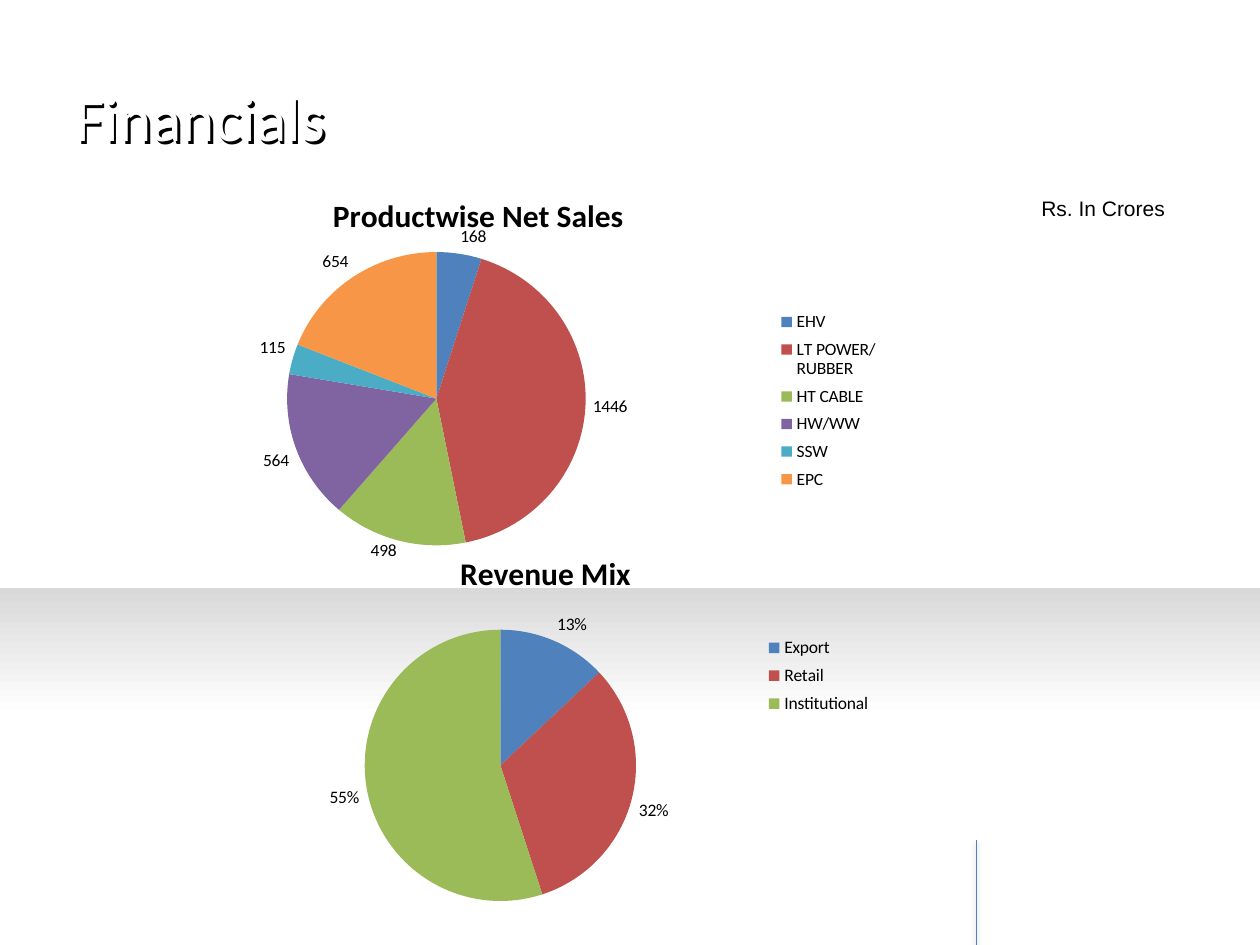
from dataclasses import dataclass

from lxml.etree import SubElement
from pptx import Presentation
from pptx.chart.data import CategoryChartData
from pptx.dml.color import RGBColor
from pptx.enum.chart import XL_CHART_TYPE, XL_LABEL_POSITION, XL_LEGEND_POSITION
from pptx.enum.shapes import MSO_CONNECTOR, MSO_SHAPE
from pptx.enum.text import MSO_ANCHOR
from pptx.oxml import parse_xml
from pptx.oxml.ns import nsdecls, qn
from pptx.util import Pt

COLORS = {
    "white": "FFFFFF", "black": "000000", "gray": "D9D9D9",
    "blue": "4F81BD", "red": "C0504D", "green": "9BBB59",
    "purple": "8064A2", "teal": "4BACC6", "orange": "F79646",
}
SLICES = ["blue", "red", "green", "purple", "teal", "orange"]
SHADE_OFFSET = 1.5
Box = tuple[float, float, float, float]


@dataclass
class Pie:
    title: str
    box: Box
    data: dict[str, float]
    number_format: str
    title_at: tuple[float, float]
    plot_box: Box
    legend_box: Box


@dataclass
class Label:
    text: str
    box: Box
    size: float
    font: str
    color: str
    anchor: MSO_ANCHOR = MSO_ANCHOR.TOP


PIES = [
    Pie("Productwise Net Sales", (90, 108, 462, 216),
        {"EHV": 168, "LT POWER/ RUBBER": 1446, "HT CABLE": 498,
         "HW/WW": 564, "SSW": 115, "EPC": 654},
        "General", (0.21, 0), (0.04, 0.17, 0.61, 0.79), (0.76, 0.31, 0.14, 0.52)),
    Pie("Revenue Mix", (102, 312, 438, 228),
        {"Export": 0.13, "Retail": 0.32, "Institutional": 0.55},
        "0%", (0.36, 0), (0.05, 0.21, 0.74, 0.68), (0.76, 0.21, 0.15, 0.23)),
]
# The white heading stands on a black one, set slightly lower and to the right.
LABELS = [
    Label("Financials", (36 + shift, 21.6 + shift, 648, 90), 36, "Calibri", color,
          MSO_ANCHOR.MIDDLE)
    for color, shift in (("black", SHADE_OFFSET), ("white", 0))
] + [Label("Rs. In Crores", (588, 108, 108, 21.6), 12, "Arial", "black")]


def rgb(name: str) -> RGBColor:
    return RGBColor.from_string(COLORS[name])


def pts(box: Box) -> list[Pt]:
    return [Pt(v) for v in box]


def set_layout(parent, index: int, place: tuple[float, ...], inner: bool = False) -> None:
    """Place a chart part by fractions of the chart's size."""
    for old in parent.findall(qn("c:layout")):
        parent.remove(old)
    layout = parent.makeelement(qn("c:layout"), {})
    parent.insert(index, layout)
    manual = SubElement(layout, qn("c:manualLayout"))
    settings = [("layoutTarget", "inner")] if inner else []
    settings += [("xMode", "edge"), ("yMode", "edge")]
    settings += zip("xywh", place)
    for tag, value in settings:
        SubElement(manual, qn(f"c:{tag}")).set("val", str(value))


def add_band(s) -> None:
    sp = s.shapes.add_shape(MSO_SHAPE.RECTANGLE, *pts((0, 336, 720, 187.2)))
    sp.shadow.inherit = False
    sp.line.fill.background()
    sp.fill.gradient()
    sp.fill.gradient_angle = 270
    stops = sp.fill.gradient_stops
    for stop, name, position in zip(stops, ("gray", "white"), (0, 0.39)):
        stop.color.rgb = rgb(name)
        stop.position = position


def add_rule(s) -> None:
    line = s.shapes.add_connector(MSO_CONNECTOR.STRAIGHT, *pts((558, 480, 558, 540)))
    line.line.color.rgb = rgb("blue")
    line.line.width = Pt(0.5)
    line._element.spPr.append(parse_xml(
        f'<a:effectLst {nsdecls("a")}><a:outerShdw blurRad="{Pt(3.1)}" '
        f'dist="{Pt(1.6)}" dir="5400000" rotWithShape="0">'
        f'<a:srgbClr val="{COLORS["black"]}"><a:alpha val="38000"/>'
        f'</a:srgbClr></a:outerShdw></a:effectLst>'))


def add_label(s, label: Label) -> None:
    tf = s.shapes.add_textbox(*pts(label.box)).text_frame
    tf.word_wrap = True
    tf.vertical_anchor = label.anchor
    r = tf.paragraphs[0].add_run()
    r.text = label.text
    r.font.size = Pt(label.size)
    r.font.name = label.font
    r.font.color.rgb = rgb(label.color)


def add_pie(s, pie: Pie) -> None:
    data = CategoryChartData(number_format=pie.number_format)
    data.categories = list(pie.data)
    data.add_series(pie.title, list(pie.data.values()))
    chart = s.shapes.add_chart(XL_CHART_TYPE.PIE, *pts(pie.box), data).chart
    chart.font.size = Pt(10)
    chart.font.name = "Calibri"
    chart.font.color.rgb = rgb("black")

    chart.has_title = True
    r = chart.chart_title.text_frame.paragraphs[0].add_run()
    r.text = pie.title
    r.font.size = Pt(18)
    r.font.bold = True
    r.font.name = "Calibri"
    r.font.color.rgb = rgb("black")
    set_layout(chart.chart_title._element, 1, pie.title_at)

    chart.has_legend = True
    chart.legend.position = XL_LEGEND_POSITION.RIGHT
    chart.legend.include_in_layout = False
    set_layout(chart.legend._element, 1, pie.legend_box)

    plot = chart.plots[0]
    plot.vary_by_categories = True
    set_layout(plot._element.getparent(), 0, pie.plot_box, inner=True)
    plot.has_data_labels = True
    labels = plot.data_labels
    labels.show_value = True
    labels.show_percentage = False
    labels.number_format = pie.number_format
    labels.number_format_is_linked = False
    labels.position = XL_LABEL_POSITION.OUTSIDE_END
    for i, name in enumerate(SLICES[:len(pie.data)]):
        fill = plot.series[0].points[i].format.fill
        fill.solid()
        fill.fore_color.rgb = rgb(name)


def main() -> None:
    prs = Presentation()
    prs.slide_width, prs.slide_height = Pt(720), Pt(540)
    s = prs.slides.add_slide(prs.slide_layouts[6])
    add_band(s)
    add_rule(s)
    for label in LABELS:
        add_label(s, label)
    for pie in PIES:
        add_pie(s, pie)
    prs.save("out.pptx")


if __name__ == "__main__":
    main()
